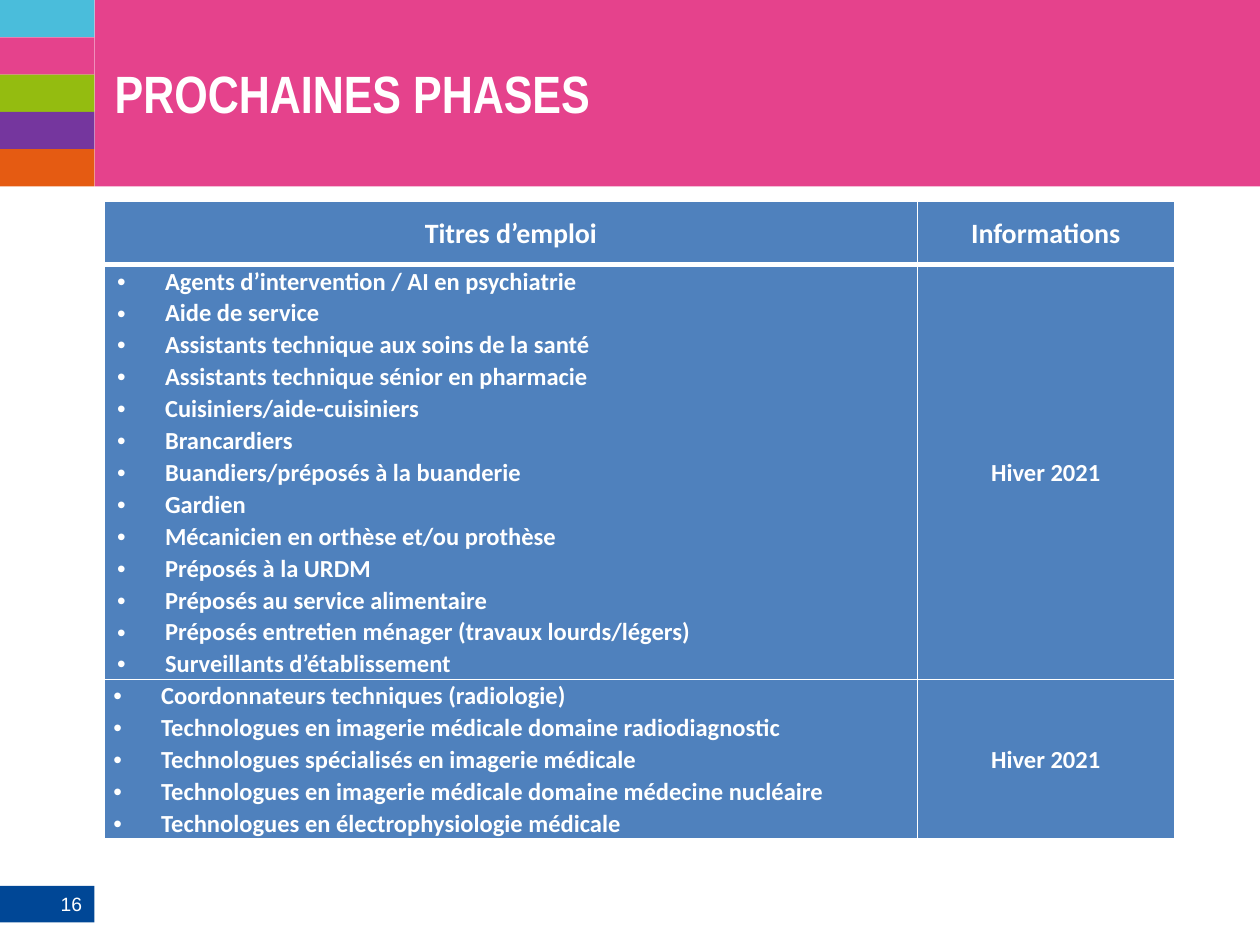
from lxml import etree
from pptx import Presentation
from pptx.dml.color import RGBColor
from pptx.enum.shapes import MSO_SHAPE
from pptx.enum.text import MSO_ANCHOR, PP_ALIGN
from pptx.oxml.ns import qn
from pptx.util import Inches, Pt

RECTANGLE = MSO_SHAPE.RECTANGLE
MIDDLE = MSO_ANCHOR.MIDDLE
LEFT, CENTER, RIGHT = PP_ALIGN.LEFT, PP_ALIGN.CENTER, PP_ALIGN.RIGHT

WHITE = RGBColor(0xFF, 0xFF, 0xFF)
PINK = RGBColor(0xE5, 0x42, 0x8C)
NAVY = RGBColor(0x00, 0x47, 0x96)
CYAN = RGBColor(0x4A, 0xBD, 0xDB)
GREEN = RGBColor(0x94, 0xBC, 0x10)
PURPLE = RGBColor(0x75, 0x36, 0x9E)
ORANGE = RGBColor(0xE5, 0x5B, 0x12)
TABLE_BLUE = RGBColor(0x4F, 0x81, 0xBD)

TITLE = "PROCHAINES PHASES"
PAGE_NUMBER = "16"
HEADERS = ["Titres d’emploi", "Informations"]
PHASES = [
    {
        "jobs": [
            "Agents d’intervention / AI en psychiatrie",
            "Aide de service",
            "Assistants technique aux soins de la santé",
            "Assistants technique sénior en pharmacie",
            "Cuisiniers/aide-cuisiniers",
            "Brancardiers",
            "Buandiers/préposés à la buanderie",
            "Gardien",
            "Mécanicien en orthèse et/ou prothèse",
            "Préposés à la URDM",
            "Préposés au service alimentaire",
            "Préposés entretien ménager (travaux lourds/légers)",
            "Surveillants d’établissement",
        ],
        "date": "Hiver 2021",
        "inset": 0.1,
    },
    {
        "jobs": [
            "Coordonnateurs techniques (radiologie)",
            "Technologues en imagerie médicale domaine radiodiagnostic",
            "Technologues spécialisés en imagerie médicale",
            "Technologues en imagerie médicale domaine médecine nucléaire",
            "Technologues en électrophysiologie médicale",
        ],
        "date": "Hiver 2021",
        "inset": 0.07,
    },
]

STRIPES = [CYAN, PINK, GREEN, PURPLE, ORANGE]
SIDE_WIDTH = 0.75
BAND_HEIGHT = 1.48
COLUMN_WIDTHS = [6.45, 2.04]
ROW_HEIGHTS = [0.5, 3.29, 1.26]


def write(frame, lines, size=14, font="Calibri", bold=True, align=LEFT,
          line_spacing=None, space=None, bullet=False):
    for index, line in enumerate(lines):
        paragraph = frame.paragraphs[0] if index == 0 else frame.add_paragraph()
        paragraph.alignment = align
        if line_spacing:
            paragraph.line_spacing = line_spacing
        if space:
            paragraph.space_after = Pt(space)
        if bullet:
            properties = paragraph._p.get_or_add_pPr()
            properties.set("marL", str(Inches(0.38)))
            properties.set("indent", str(-Inches(0.38)))
            etree.SubElement(properties, qn("a:buFont")).set("typeface", "Arial")
            etree.SubElement(properties, qn("a:buChar")).set("char", "•")
        run = paragraph.add_run()
        run.text = line
        run.font.size = Pt(size)
        run.font.name = font
        run.font.bold = bold
        run.font.color.rgb = WHITE


def add_block(slide, left, top, width, height, color):
    block = slide.shapes.add_shape(
        RECTANGLE, Inches(left), Inches(top), Inches(width), Inches(height))
    block.shadow.inherit = False
    block.fill.solid()
    block.fill.fore_color.rgb = color
    block.line.fill.background()
    return block


def fill_cell(cell, lines, inset=0.1, bottom_border=1, **text_format):
    properties = cell._tc.get_or_add_tcPr()
    borders = {"a:lnL": 1, "a:lnR": 1, "a:lnT": 1, "a:lnB": bottom_border}
    for side, weight in borders.items():
        border = etree.SubElement(properties, qn(side), w=str(Pt(weight)))
        solid = etree.SubElement(border, qn("a:solidFill"))
        etree.SubElement(solid, qn("a:srgbClr"), val=str(WHITE))
    cell.fill.solid()
    cell.fill.fore_color.rgb = TABLE_BLUE
    cell.vertical_anchor = MIDDLE
    cell.margin_left = cell.margin_right = Inches(inset)
    cell.margin_top = cell.margin_bottom = 0
    write(cell.text_frame, lines, line_spacing=1.07, **text_format)


def add_phase_table(slide):
    table = slide.shapes.add_table(
        len(ROW_HEIGHTS), len(COLUMN_WIDTHS), Inches(0.83), Inches(1.6),
        Inches(sum(COLUMN_WIDTHS)), Inches(sum(ROW_HEIGHTS))).table
    for column, width in zip(table.columns, COLUMN_WIDTHS):
        column.width = Inches(width)
    for row, height in zip(table.rows, ROW_HEIGHTS):
        row.height = Inches(height)
    for column, header in enumerate(HEADERS):
        fill_cell(table.cell(0, column), [header], bottom_border=3,
                  size=16, align=CENTER)
    for row, phase in enumerate(PHASES, start=1):
        inset = phase["inset"]
        fill_cell(table.cell(row, 0), phase["jobs"], inset, bullet=True)
        fill_cell(table.cell(row, 1), [phase["date"]], inset,
                  align=CENTER, space=3)


def main():
    presentation = Presentation()
    presentation.slide_width = Inches(10)
    presentation.slide_height = Inches(7.5)
    slide = presentation.slides.add_slide(presentation.slide_layouts[5])

    add_block(slide, SIDE_WIDTH, 0, 10 - SIDE_WIDTH, BAND_HEIGHT, PINK)
    page_box = add_block(slide, 0, 7.03, SIDE_WIDTH, 0.29, NAVY)
    page_box.text_frame.vertical_anchor = MIDDLE
    write(page_box.text_frame, [PAGE_NUMBER], size=11, font="Arial",
          bold=False, align=RIGHT)
    stripe_height = BAND_HEIGHT / len(STRIPES)
    for index, color in enumerate(STRIPES):
        add_block(slide, 0, index * stripe_height, SIDE_WIDTH, stripe_height, color)

    title = slide.shapes.title
    title.left, title.top = Inches(0.91), Inches(0)
    title.width, title.height = Inches(8.82), Inches(1.47)
    frame = title.text_frame
    frame.margin_left = frame.margin_right = 0
    frame.margin_top = frame.margin_bottom = 0
    frame.vertical_anchor = MIDDLE
    write(frame, [TITLE], size=30, font="Arial Narrow")
    title.element.getparent().append(title.element)

    add_phase_table(slide)
    presentation.save("out.pptx")


if __name__ == "__main__":
    main()
